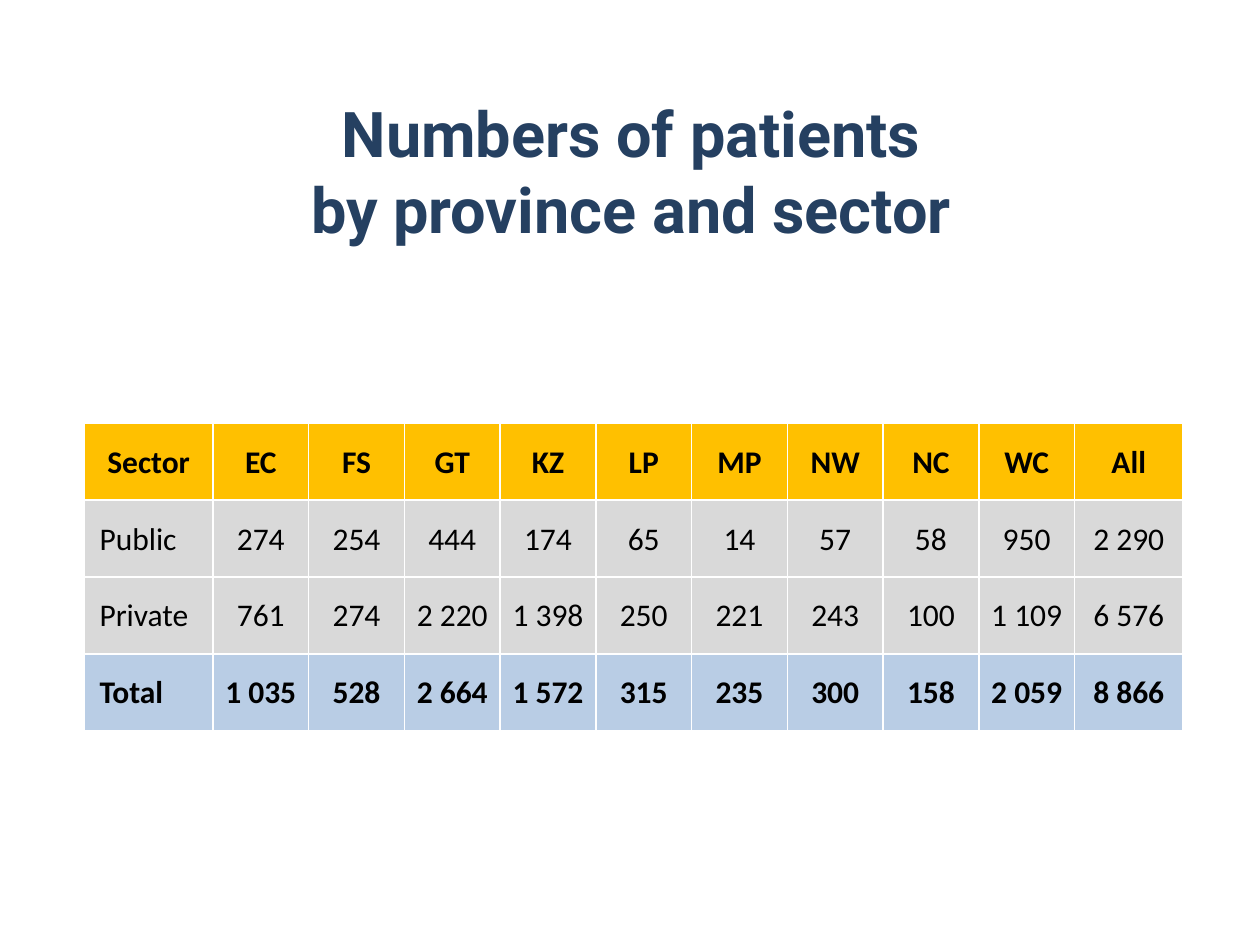
from lxml.etree import SubElement
from pptx import Presentation
from pptx.dml.color import RGBColor
from pptx.enum.text import MSO_ANCHOR, PP_ALIGN
from pptx.oxml.ns import qn
from pptx.util import Inches, Pt

# Content
TITLE = ("Numbers of patients", "by province and sector")
ROWS = [
    ("Sector", "EC", "FS", "GT", "KZ", "LP", "MP", "NW", "NC", "WC", "All"),
    ("Public", "274", "254", "444", "174", "65", "14", "57", "58", "950", "2 290"),
    ("Private", "761", "274", "2 220", "1 398", "250", "221", "243", "100", "1 109", "6 576"),
    ("Total", "1 035", "528", "2 664", "1 572", "315", "235", "300", "158", "2 059", "8 866"),
]
# Fill and bold for each row
LOOKS = [("FFC000", True), ("D9D9D9", False), ("D9D9D9", False), ("B9CDE5", True)]

# Grid in inches
LEFT, TOP, ROW = 0.67, 3.36, 0.61
COLS = [1.02] + [0.76] * 9 + [0.86]


def color(code):
    return RGBColor.from_string(code)


def style(par, face, size, code, bold, align):
    par.alignment = align
    font = par.font
    font.name, font.size, font.bold = face, Pt(size), bold
    font.color.rgb = color(code)


def add_edges(cell, code, width):
    props = cell._tc.get_or_add_tcPr()
    for spot, side in enumerate(("lnL", "lnR", "lnT", "lnB")):
        line = props.makeelement(qn("a:" + side), {"w": str(Pt(width))})
        fill = SubElement(line, qn("a:solidFill"))
        SubElement(fill, qn("a:srgbClr"), val=code)
        props.insert(spot, line)


deck = Presentation()
deck.slide_width, deck.slide_height = Inches(10), Inches(7.5)
slide = deck.slides.add_slide(deck.slide_layouts[6])

# Title
box = slide.shapes.add_textbox(Inches(0.51), Inches(0.84), Inches(9), Inches(1.02))
frame = box.text_frame
frame.word_wrap = True
frame.vertical_anchor = MSO_ANCHOR.MIDDLE
par = frame.paragraphs[0]
par.add_run().text = TITLE[0]
par.add_line_break()
par.add_run().text = TITLE[1]
style(par, "Roboto", 36, "254061", True, PP_ALIGN.CENTER)

# Table
table = slide.shapes.add_table(
    len(ROWS), len(COLS), Inches(LEFT), Inches(TOP),
    Inches(sum(COLS)), Inches(ROW * len(ROWS))).table
for col, width in zip(table.columns, COLS):
    col.width = Inches(width)

for r, (row, (fill, bold)) in enumerate(zip(ROWS, LOOKS)):
    table.rows[r].height = Inches(ROW)
    for c, text in enumerate(row):
        cell = table.cell(r, c)
        label = c == 0 and r > 0
        cell.text = text
        cell.vertical_anchor = MSO_ANCHOR.MIDDLE
        cell.margin_left = Inches(0.12 if label else 0.01)
        cell.margin_right = cell.margin_top = Inches(0.01)
        cell.margin_bottom = 0
        cell.fill.solid()
        cell.fill.fore_color.rgb = color(fill)
        add_edges(cell, "FFFFFF", 1)
        style(cell.text_frame.paragraphs[0], "Calibri", 18, "000000", bold,
              PP_ALIGN.LEFT if label else PP_ALIGN.CENTER)

deck.save("out.pptx")
